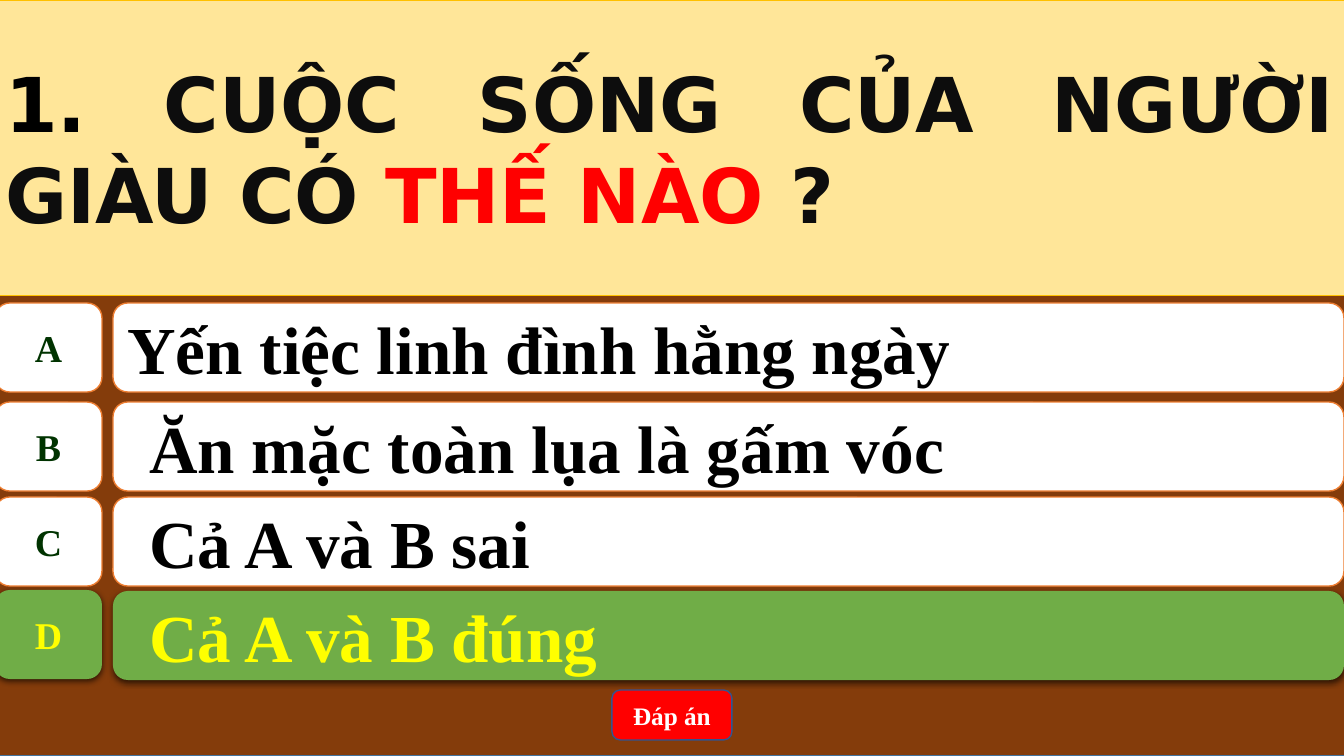
from dataclasses import dataclass

from lxml.etree import SubElement
from pptx import Presentation
from pptx.dml.color import RGBColor
from pptx.enum.shapes import MSO_SHAPE as Shape
from pptx.enum.text import MSO_ANCHOR as Anchor, MSO_AUTO_SIZE as AutoSize, PP_ALIGN as Align
from pptx.oxml.ns import qn
from pptx.util import Emu, Pt


@dataclass(frozen=True)
class Theme:
    board: str = "843C0B"
    board_line: str = "43739E"
    banner: str = "FFE699"
    banner_line: str = "FFC000"
    white: str = "FFFFFF"
    black: str = "000000"
    ink: str = "0D0D0D"
    red: str = "FF0000"
    option_line: str = "ED7D31"
    letter: str = "003300"
    correct: str = "70AD47"
    correct_text: str = "FFFF00"
    button_line: str = "325491"
    serif: str = "Times New Roman"
    sans: str = "DejaVu Sans"
    question_size: int = 54
    answer_size: int = 48
    letter_size: int = 27
    button_size: int = 18


THEME = Theme()
EMU_PER_PX = 914400 / 100.8
LEFT, LETTER_WIDTH, OPTION_HEIGHT = -5, 107, 89
ANSWER_LEFT, ANSWER_WIDTH = 113, 1231


def px(length):
    return Emu(round(length * EMU_PER_PX))


def rgb(code):
    return RGBColor.from_string(code)


def paint(box, fill, line=None, weight=1):
    box.fill.solid()
    box.fill.fore_color.rgb = rgb(fill)
    if line:
        box.line.color.rgb = rgb(line)
        box.line.width = Pt(weight)
    else:
        box.line.fill.background()


def add_box(page, kind, left, top, width, height, fill, line=None):
    box = page.shapes.add_shape(kind, px(left), px(top), px(width), px(height))
    box.shadow.inherit = False
    paint(box, fill, line)
    return box


def add_shadow(box):
    effects = box._element.spPr.find(qn("a:effectLst"))
    shadow = SubElement(effects, qn("a:outerShdw"), blurRad=str(Pt(4.5)),
                        dist=str(Pt(1.5)), dir="5400000", rotWithShape="0")
    color = SubElement(shadow, qn("a:srgbClr"), val=THEME.black)
    SubElement(color, qn("a:alpha"), val="63000")


def write(box, *spans, size, font=THEME.serif, align=Align.LEFT, wrap=True,
          margin=0, indent=0):
    """Fill a box with one bold paragraph of (text, colour) spans."""
    frame = box.text_frame
    frame.word_wrap = wrap
    frame.vertical_anchor = Anchor.MIDDLE
    para = frame.paragraphs[0]
    para.alignment = align
    if margin:
        properties = para._p.get_or_add_pPr()
        properties.set("marL", str(px(margin)))
        properties.set("indent", str(px(indent)))
    for text, color in spans:
        span = para.add_run()
        span.text = text
        span.font.name = font
        span.font.size = Pt(size)
        span.font.bold = True
        span.font.color.rgb = rgb(color)


def add_question(page):
    title = page.shapes.title
    title.left, title.top, title.width, title.height = px(LEFT), px(0), px(1350), px(295)
    paint(title, THEME.banner, THEME.banner_line, 0.5)
    title.text_frame.auto_size = AutoSize.NONE
    write(title, ("1. ", THEME.black), ("CUỘC SỐNG CỦA NGƯỜI GIÀU CÓ ", THEME.ink),
          ("THẾ NÀO ", THEME.red), ("?", THEME.ink),
          size=THEME.question_size, font=THEME.sans, align=Align.JUSTIFY)
    title.text_frame.paragraphs[0].line_spacing = 1.0
    # Bring the banner in front of the board
    page.shapes._spTree.append(title._element)


def add_option(page, letter, answer, top, margin=50, indent=-28, correct=False):
    fill, line = (THEME.correct, None) if correct else (THEME.white, THEME.option_line)
    answer_color = THEME.correct_text if correct else THEME.black
    letter_color = THEME.correct_text if correct else THEME.letter
    answer_box = add_box(page, Shape.ROUNDED_RECTANGLE, ANSWER_LEFT, top,
                         ANSWER_WIDTH, OPTION_HEIGHT, fill, line)
    letter_box = add_box(page, Shape.FLOWCHART_ALTERNATE_PROCESS, LEFT,
                         top - 1 if correct else top,
                         LETTER_WIDTH, OPTION_HEIGHT, fill, line)
    write(answer_box, (answer, answer_color), size=THEME.answer_size,
          margin=margin, indent=indent)
    write(letter_box, (letter, letter_color), size=THEME.letter_size,
          align=Align.CENTER, wrap=False)
    if correct:
        add_shadow(answer_box)
        add_shadow(letter_box)


def main():
    deck = Presentation()
    deck.slide_width, deck.slide_height = px(1344), px(756)
    page = deck.slides.add_slide(deck.slide_layouts[5])

    # Board and question banner
    add_box(page, Shape.RECTANGLE, LEFT, 0, 1350, 756, THEME.board, THEME.board_line)
    add_question(page)

    # Answer options
    add_option(page, "A", "Yến tiệc linh đình hằng ngày", 303, margin=17)
    add_option(page, "B", "Ăn mặc toàn lụa là gấm vóc", 402)
    add_option(page, "C", "Cả A và B sai", 497)
    add_option(page, "D", "Cả A và B đúng", 591, correct=True)

    # Button that reveals the answer
    button = add_box(page, Shape.ROUNDED_RECTANGLE, 612, 690, 120, 50,
                     THEME.red, THEME.button_line)
    write(button, ("Đáp án", THEME.white), size=THEME.button_size, align=Align.CENTER)

    deck.save("out.pptx")


if __name__ == "__main__":
    main()
